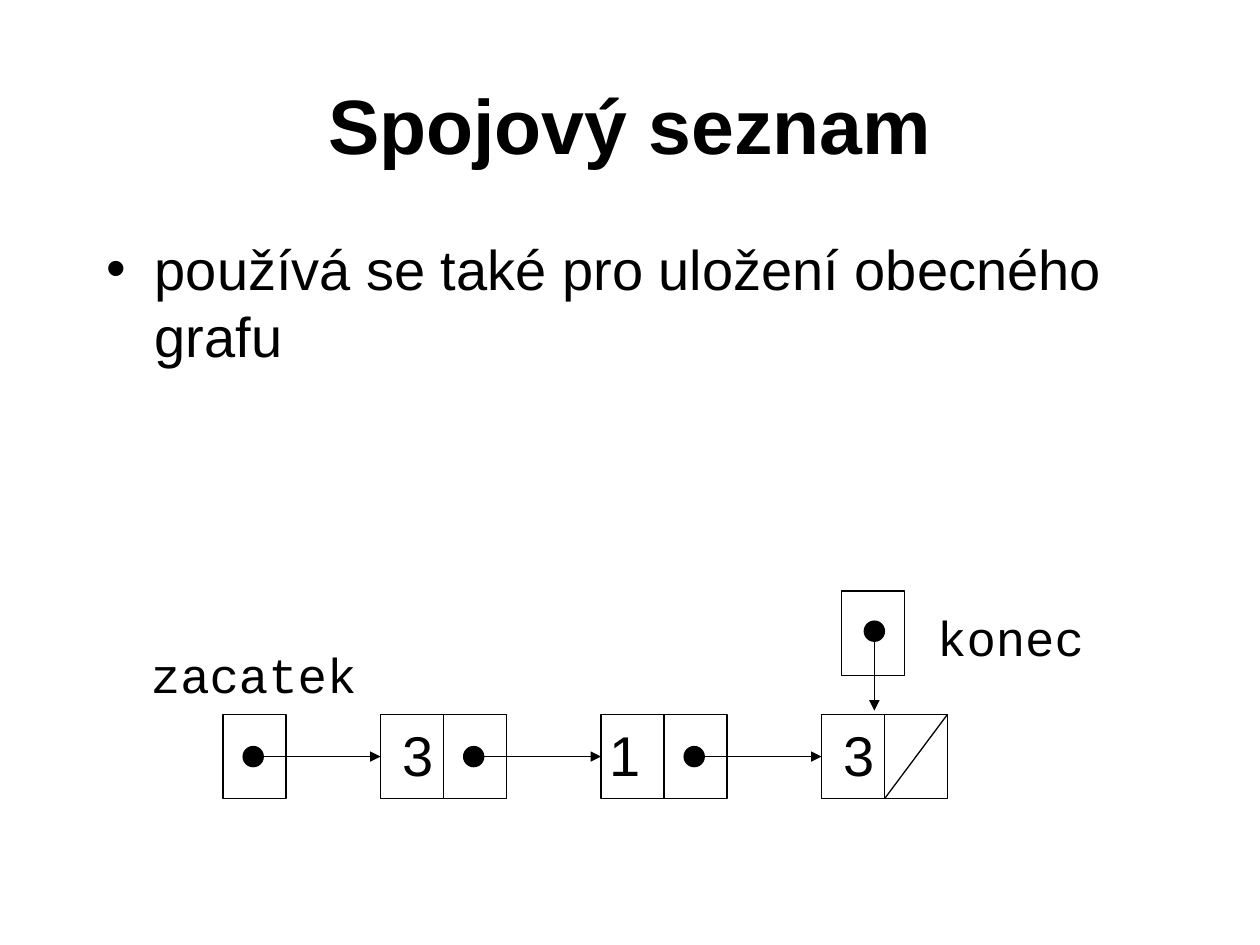
from dataclasses import dataclass
from typing import Optional

from lxml.etree import SubElement
from pptx import Presentation
from pptx.dml.color import RGBColor
from pptx.enum.shapes import MSO_CONNECTOR as Connector, MSO_SHAPE as Preset
from pptx.enum.text import MSO_ANCHOR as Anchor, MSO_AUTO_SIZE as AutoSize, PP_ALIGN as Align
from pptx.oxml.ns import qn
from pptx.util import Inches, Pt


@dataclass(frozen=True)
class Theme:
    ink: RGBColor = RGBColor(0, 0, 0)
    paper: RGBColor = RGBColor(255, 255, 255)
    sans: str = "Arial"
    mono: str = "Courier New"
    title: int = 44
    body: int = 32
    label: int = 28
    outline: float = 0.75
    arrow: float = 1


@dataclass(frozen=True)
class Node:
    value: str
    shift: float  # offset of the value's text box from its cell
    align: Optional[Align] = None


THEME = Theme()
PAGE_W, PAGE_H = 10, 7.5
MARGIN = 0.075 * PAGE_W
CELL_W, CELL_H = 0.5, 0.67
PITCH = 3.5 * CELL_W  # from one list node to the next
START_X, ROW_Y = 1.77, 5.67
END_X, END_Y = 6.68, 4.69
DOT = 0.16
NODES = [
    Node("3", 0.08, Align.CENTER),
    Node("1", -0.03),
    Node("3", 0.08, Align.CENTER),
]


def write(box, text, *, size, font=THEME.sans, bold=False, align=None, wrap=True):
    frame = box.text_frame
    frame.word_wrap = wrap
    frame.auto_size = AutoSize.NONE if wrap else AutoSize.SHAPE_TO_FIT_TEXT
    para = frame.paragraphs[0]
    para.alignment = align
    span = para.add_run()
    span.text = text
    span.font.size, span.font.name, span.font.bold = Pt(size), font, bold
    span.font.color.rgb = THEME.ink
    return para


def add_text(page, text, left, top, width, height, **form):
    box = page.shapes.add_textbox(*map(Inches, (left, top, width, height)))
    return write(box, text, **form)


def add_bullet(para):
    props = para._p.get_or_add_pPr()
    props.set("marL", str(Inches(0.38)))
    props.set("indent", str(Inches(-0.38)))
    spacing = SubElement(props, qn("a:spcBef"))
    SubElement(spacing, qn("a:spcPct"), val="20000")
    SubElement(props, qn("a:buFont"), typeface=THEME.sans)
    SubElement(props, qn("a:buChar"), char="•")


def add_outlined(page, preset, left, top, width, height, filled=False):
    shape = page.shapes.add_shape(preset, *map(Inches, (left, top, width, height)))
    shape.shadow.inherit = False
    if filled:
        shape.fill.solid()
        shape.fill.fore_color.rgb = THEME.ink
    else:
        shape.fill.background()
    shape.line.color.rgb = THEME.ink
    shape.line.width = Pt(THEME.outline)
    return shape


def add_cell(page, left: float, top: float = ROW_Y):
    return add_outlined(page, Preset.RECTANGLE, left, top, CELL_W, CELL_H)


def add_dot(page, x: float, y: float):
    add_outlined(page, Preset.OVAL, x - DOT / 2, y - DOT / 2, DOT, DOT, filled=True)


def add_line(page, start, end, width: float, arrow: bool = False):
    line = page.shapes.add_connector(Connector.STRAIGHT, *map(Inches, (*start, *end)))
    line.line.color.rgb = THEME.ink
    line.line.width = Pt(width)
    if arrow:
        SubElement(line.line._get_or_add_ln(), qn("a:tailEnd"), type="triangle")
    SubElement(line._element.spPr, qn("a:effectLst"))
    return line


def add_node(page, node: Node, left: float):
    """Draw a value cell and its pointer cell; return the value cell."""
    add_cell(page, left + CELL_W)
    value_cell = add_cell(page, left)
    add_text(page, node.value, left + node.shift, ROW_Y, 0.44, 0.63,
             size=THEME.body, align=node.align, wrap=False)
    return value_cell


def add_list(page):
    add_cell(page, START_X)
    middle = ROW_Y + CELL_H / 2
    for index, node in enumerate(NODES):
        pointer = START_X + index * PITCH
        target = pointer + PITCH - CELL_W
        value_cell = add_node(page, node, target)
        link = add_line(page, (pointer + CELL_W / 2, middle), (target, middle),
                        THEME.arrow, arrow=True)
        link.end_connect(value_cell, 1)
        add_dot(page, pointer + 0.24, middle)

    last = START_X + len(NODES) * PITCH
    add_line(page, (last + CELL_W, ROW_Y), (last, ROW_Y + CELL_H), THEME.outline)


def add_end_pointer(page):
    add_cell(page, END_X, END_Y)
    x, y = END_X + 0.26, END_Y + 0.32
    add_dot(page, x, y)
    add_line(page, (x, y), (x, ROW_Y - 0.03), THEME.arrow, arrow=True)


def main():
    deck = Presentation()
    deck.slide_width, deck.slide_height = Inches(PAGE_W), Inches(PAGE_H)
    page = deck.slides.add_slide(deck.slide_layouts[5])
    page.background.fill.solid()
    page.background.fill.fore_color.rgb = THEME.paper

    title = page.shapes.title
    content_w = PAGE_W - 2 * MARGIN
    title.left, title.top, title.width, title.height = map(
        Inches, (MARGIN, 0.36, content_w, PAGE_H / 6))
    title.text_frame.vertical_anchor = Anchor.MIDDLE
    write(title, "Spojový seznam", size=THEME.title, bold=True, align=Align.CENTER)

    add_bullet(add_text(page, "používá se také pro uložení obecného grafu",
                        MARGIN, 1.81, content_w, 1.55, size=THEME.body))
    add_list(page)
    add_end_pointer(page)
    for text, left, top, width in (("zacatek", 1.1, 5.07, 1.87), ("konec", 7.34, 4.77, 1.4)):
        add_text(page, text, left, top, width, 0.57,
                 size=THEME.label, font=THEME.mono, wrap=False)
    deck.save("out.pptx")


if __name__ == "__main__":
    main()
